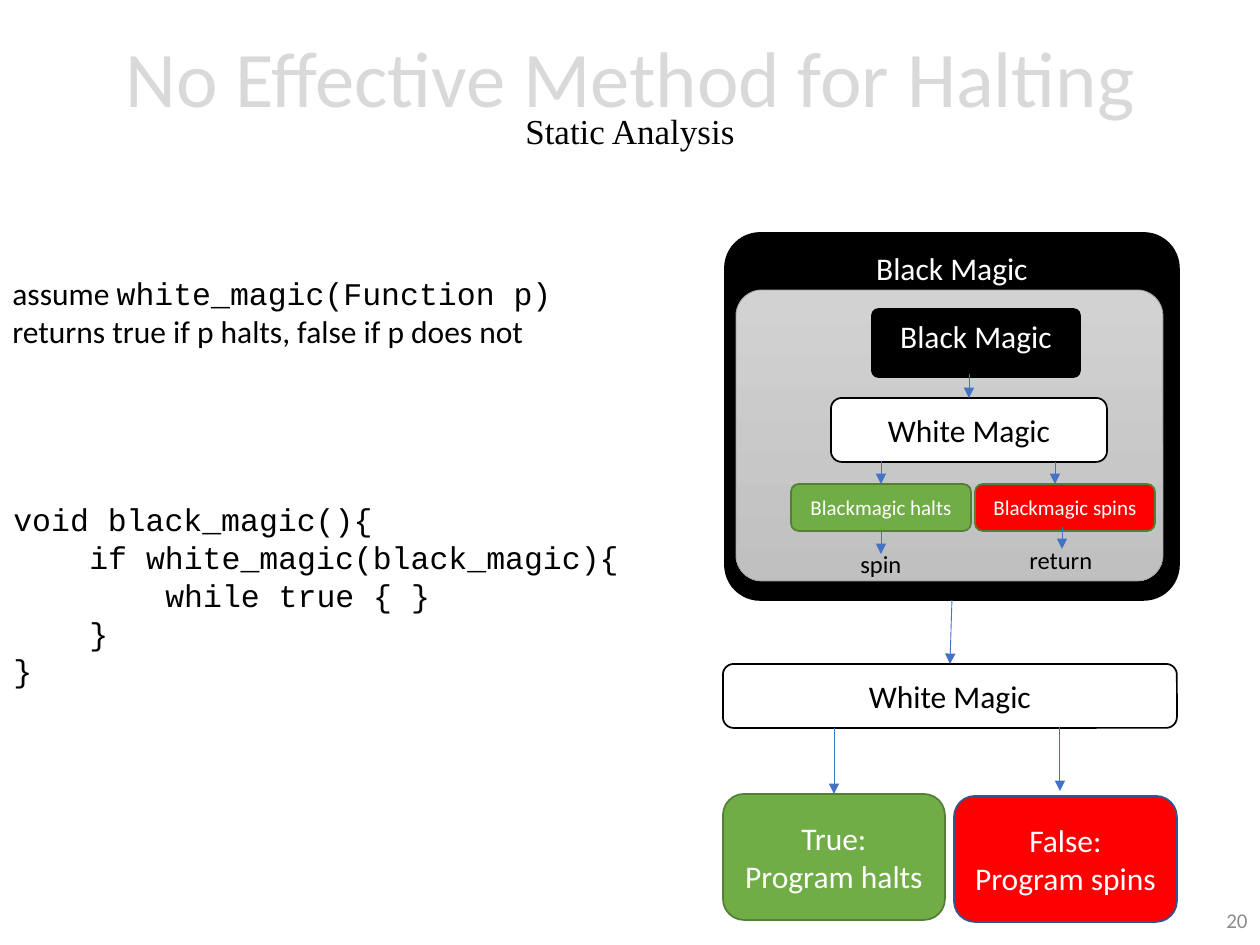
import dataclasses

import pptx
import pptx.dml.color
import pptx.enum.shapes
import pptx.enum.text
import pptx.oxml
import pptx.oxml.ns
import pptx.util

ANCHOR = pptx.enum.text.MSO_ANCHOR
ALIGN = pptx.enum.text.PP_ALIGN
AUTO_SIZE = pptx.enum.text.MSO_AUTO_SIZE
TOP, BOTTOM = 0, 2
PX = 914400 // 126


@dataclasses.dataclass(frozen=True)
class Theme:
    sans: str = "Calibri"
    mono: str = "Courier New"
    serif: str = "Times New Roman"
    heading: int = 45
    subheading: int = 20
    body: int = 18
    label: int = 14
    small: int = 12
    black: str = "000000"
    white: str = "FFFFFF"
    pale: str = "D9D9D9"
    muted: str = "8C8C8C"
    green: str = "70AD47"
    dark_green: str = "538035"
    red: str = "FF0000"
    dark_blue: str = "325491"
    arrow: str = "4472C4"
    panel: tuple = ("D2D2D2", "C0C0C0")
    panel_line: str = "A5A5A5"


THEME = Theme()

# Run: text, font, size, colour
TITLE = [
    ("No Effective Method for Halting", THEME.sans, THEME.heading, THEME.pale),
    ("Static Analysis", THEME.serif, THEME.subheading, THEME.black),
]
ASSUMPTION = [
    [("assume ", THEME.sans), ("white_magic(Function p)", THEME.mono)],
    [("returns true if p halts, false if p does not", THEME.sans)],
]
# Indent level, line of code
CODE = [
    (0, "void black_magic(){"),
    (1, "if white_magic(black_magic){"),
    (2, "while true { }"),
    (1, "}"),
    (0, "}"),
]
CODE_INDENT = 76

BLACK_BOX = dict(fill=THEME.black, line=THEME.black, color=THEME.white,
                 anchor=ANCHOR.TOP, corner=0.096)
WHITE_BOX = dict(fill=THEME.white, line=THEME.black, color=THEME.black)
HALTS_BOX = dict(fill=THEME.green, line=THEME.dark_green, color=THEME.white)
SPINS_BOX = dict(fill=THEME.red, line=THEME.dark_blue, color=THEME.white)
PANEL = dict(fill=THEME.panel, line=THEME.panel_line, line_width=0.5, corner=0.089)
SMALL = dict(size=THEME.small)

# Name: position and size in px, lines of text, format
BOXES = {
    "outer white": ((723, 664, 454, 64), ["White Magic"], WHITE_BOX),
    "true": ((723, 794, 222, 126), ["True:", "Program halts"], HALTS_BOX),
    "false": ((954, 796, 223, 126), ["False:", "Program spins"], SPINS_BOX),
    "outer black": ((725, 233, 454, 367), ["Black Magic"], BLACK_BOX),
    "panel": ((736, 290, 427, 291), [], PANEL),
    "inner white": ((831, 398, 276, 64), ["White Magic"], WHITE_BOX),
    "halts": ((791, 484, 180, 47), ["Blackmagic halts"], HALTS_BOX | SMALL),
    "spins": ((975, 484, 180, 47), ["Blackmagic spins"],
              SPINS_BOX | SMALL | dict(line=THEME.dark_green)),
    "inner black": ((872, 309, 208, 68), ["Black Magic"], BLACK_BOX),
}
LABELS = [((848, 543, 67, 43), "spin"), ((1017, 539, 89, 43), "return")]
# From, to, box joined at its bottom, box joined at its top
ARROWS = [
    ((834, 728), (834, 794), None, "true"),
    ((1060, 727), (1060, 791), None, None),
    ((952, 600), (950, 664), "outer black", "outer white"),
    ((969, 374), (969, 398), None, "inner white"),
    ((881, 461), (881, 484), None, "halts"),
    ((1055, 462), (1055, 484), None, None),
    ((881, 531), (881, 554), "halts", None),
    ((1062, 527), (1062, 549), None, None),
]


def px(values):
    return [value * PX for value in values]


def rgb(color):
    return pptx.dml.color.RGBColor.from_string(color)


def apply(target, **values):
    for name, value in values.items():
        setattr(target, name, value)


def add_run(paragraph, text, font=THEME.sans, size=THEME.body, color=THEME.black):
    run = paragraph.add_run()
    run.text = text
    apply(run.font, name=font, size=pptx.util.Pt(size))
    run.font.color.rgb = rgb(color)


def paragraphs(frame, count):
    """Return the frame's first paragraph and enough new ones to make count."""
    return [frame.paragraphs[0]] + [frame.add_paragraph() for _ in range(count - 1)]


def add_text(slide, position, lines, align=ALIGN.LEFT, **frame_format):
    """Add a text box; each line is a list of runs. Return its paragraphs."""
    frame = slide.shapes.add_textbox(*px(position)).text_frame
    apply(frame, **(dict(word_wrap=False, auto_size=AUTO_SIZE.SHAPE_TO_FIT_TEXT)
                    | frame_format))
    result = paragraphs(frame, len(lines))
    for paragraph, runs in zip(result, lines):
        paragraph.alignment = align
        for run in runs:
            add_run(paragraph, *run)
    return result


def add_title(slide):
    title = slide.shapes.title
    apply(title, **dict(zip(("left", "top", "width", "height"),
                            px((0, 11, 1260, 183)))))
    apply(title.text_frame, vertical_anchor=ANCHOR.MIDDLE, word_wrap=True,
          auto_size=AUTO_SIZE.NONE)
    paragraph = title.text_frame.paragraphs[0]
    apply(paragraph, alignment=ALIGN.CENTER, line_spacing=0.7)
    heading, subheading = TITLE
    add_run(paragraph, *heading)
    paragraph.add_line_break()
    add_run(paragraph, *subheading)


def add_box(slide, position, lines, fill, line, color=THEME.black, size=THEME.body,
            anchor=ANCHOR.MIDDLE, corner=None, line_width=1):
    shape = slide.shapes.add_shape(
        pptx.enum.shapes.MSO_SHAPE.ROUNDED_RECTANGLE, *px(position))
    shape.shadow.inherit = False
    if corner is not None:
        shape.adjustments[0] = corner
    if isinstance(fill, tuple):
        shape.fill.gradient()
        shape.fill.gradient_angle = 270
        for stop, stop_color in zip(shape.fill.gradient_stops, fill):
            stop.color.rgb = rgb(stop_color)
    else:
        shape.fill.solid()
        shape.fill.fore_color.rgb = rgb(fill)
    shape.line.color.rgb = rgb(line)
    shape.line.width = pptx.util.Pt(line_width)
    apply(shape.text_frame, vertical_anchor=anchor, word_wrap=True)
    for paragraph, text in zip(paragraphs(shape.text_frame, len(lines)), lines):
        paragraph.alignment = ALIGN.CENTER
        add_run(paragraph, text, size=size, color=color)
    return shape


def add_arrow(slide, start, end, source, target):
    arrow = slide.shapes.add_connector(
        pptx.enum.shapes.MSO_CONNECTOR.STRAIGHT, *px(start + end))
    if source is not None:
        arrow.begin_connect(source, BOTTOM)
    if target is not None:
        arrow.end_connect(target, TOP)
    arrow.line.color.rgb = rgb(THEME.arrow)
    arrow.line.width = pptx.util.Pt(0.5)
    namespace = pptx.oxml.ns.nsdecls("a")
    arrow.line._get_or_add_ln().append(
        pptx.oxml.parse_xml(f'<a:tailEnd {namespace} type="triangle"/>'))
    arrow._element.spPr.append(pptx.oxml.parse_xml(f"<a:effectLst {namespace}/>"))


def main():
    presentation = pptx.Presentation()
    apply(presentation, slide_width=1260 * PX, slide_height=945 * PX)
    slide = presentation.slides.add_slide(presentation.slide_layouts[5])
    add_title(slide)
    add_text(slide, (976, 895, 284, 50),
             [[("20", THEME.sans, THEME.small, THEME.muted)]], align=ALIGN.RIGHT,
             word_wrap=True, auto_size=AUTO_SIZE.NONE, vertical_anchor=ANCHOR.MIDDLE)
    add_text(slide, (0, 268, 575, 89), ASSUMPTION)
    code = add_text(slide, (1, 494, 634, 204),
                    [[(text, THEME.mono)] for _, text in CODE])
    for paragraph, (level, _) in zip(code, CODE):
        paragraph._p.get_or_add_pPr().set("marL", str(level * CODE_INDENT * PX))
    boxes = {name: add_box(slide, position, lines, **box_format)
             for name, (position, lines, box_format) in BOXES.items()}
    for position, text in LABELS:
        add_text(slide, position, [[(text, THEME.sans, THEME.label)]])
    for start, end, source, target in ARROWS:
        add_arrow(slide, start, end, boxes.get(source), boxes.get(target))
    presentation.save("out.pptx")


if __name__ == "__main__":
    main()
